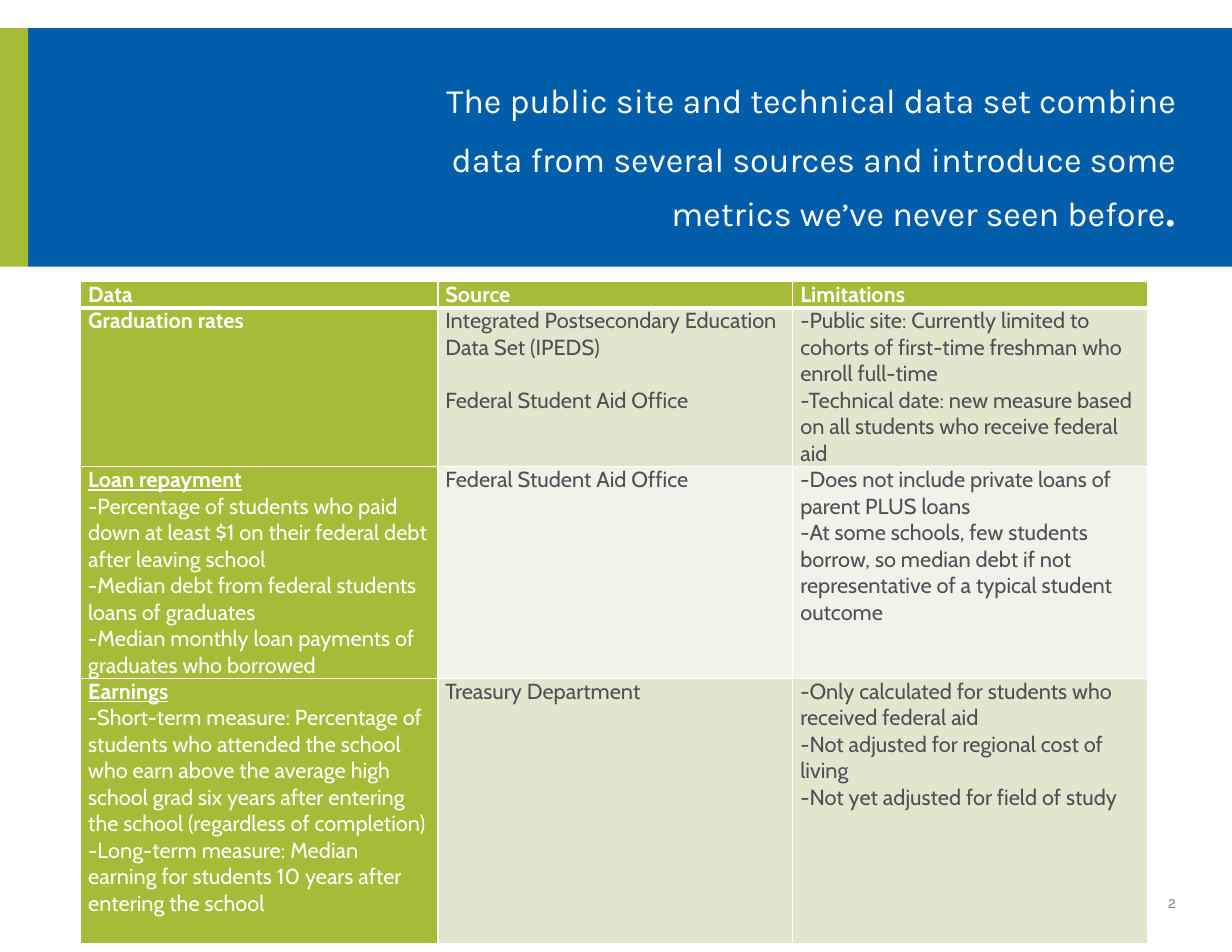
from lxml import etree
from pptx import Presentation
from pptx.dml.color import RGBColor
from pptx.enum.shapes import MSO_SHAPE
from pptx.enum.text import MSO_ANCHOR, PP_ALIGN
from pptx.oxml.ns import qn
from pptx.util import Cm, Pt

RECTANGLE = MSO_SHAPE.RECTANGLE
BOTTOM = MSO_ANCHOR.BOTTOM
RIGHT = PP_ALIGN.RIGHT
BLUE = RGBColor(0x00, 0x5D, 0xAA)
GREEN = RGBColor(0xA7, 0xBB, 0x39)
BAND = RGBColor(0xE1, 0xE7, 0xCE)
PALE = RGBColor(0xF1, 0xF3, 0xE8)
INK = RGBColor(0x4F, 0x50, 0x54)
GREY = RGBColor(0x7B, 0x7C, 0x7F)
WHITE = RGBColor(0xFF, 0xFF, 0xFF)

HEADINGS = ["Data", "Source", "Limitations"]
ROWS = [
    (
        "Graduation rates",
        [],
        ["Integrated Postsecondary Education Data Set (IPEDS)",
         "Federal Student Aid Office"],
        ["-Public site: Currently limited to cohorts of first-time freshman who enroll full-time",
         "-Technical date: new measure based on all students who receive federal aid"],
    ),
    (
        "Loan repayment",
        ["-Percentage of students who paid down at least $1 on their federal debt after leaving school",
         "-Median debt from federal students loans of graduates",
         "-Median monthly loan payments of graduates who borrowed"],
        ["Federal Student Aid Office"],
        ["-Does not include private loans of parent PLUS loans",
         "-At some schools, few students borrow, so median debt if not "
         "representative of a typical student outcome"],
    ),
    (
        "Earnings",
        ["-Short-term measure: Percentage of students who attended the school who earn above "
         "the average high school grad six years after entering the school (regardless of completion)",
         "-Long-term measure: Median earning for students 10 years after entering the school"],
        ["Treasury Department"],
        ["-Only calculated for students who received federal aid",
         "-Not adjusted for regional cost of living",
         "-Not yet adjusted for field of study"],
    ),
]


def add_run(paragraph, text, size=14, font="Cabin", color=WHITE, bold=False, underline=False):
    """Add one formatted run to a paragraph."""
    run = paragraph.add_run()
    run.text = text
    run.font.size = Pt(size)
    run.font.name = font
    run.font.color.rgb = color
    run.font.bold = bold
    run.font.underline = underline


def add_borders(cell, bottom):
    """Give a cell white borders with the stated bottom width in points."""
    properties = cell._tc.get_or_add_tcPr()
    for index, (side, width) in enumerate(zip("LRTB", (1, 1, 1, bottom))):
        line = etree.Element(qn(f"a:ln{side}"), w=str(Pt(width)))
        fill = etree.SubElement(line, qn("a:solidFill"))
        etree.SubElement(fill, qn("a:srgbClr"), val=str(WHITE))
        properties.insert(index, line)


class SlideBuilder:
    """Hold the current slide and draw its elements in one style."""

    def __init__(self, slide):
        """Keep the slide to draw on."""
        self.slide = slide

    def bar(self, left, width, color):
        """Draw one part of the header band."""
        shape = self.slide.shapes.add_shape(RECTANGLE, Cm(left), Cm(0.64), Cm(width), Cm(5.41))
        shape.shadow.inherit = False
        shape.fill.solid()
        shape.fill.fore_color.rgb = color
        shape.line.fill.background()

    def text_box(self, left, top, width, height):
        """Add a right-aligned text box and return its paragraph."""
        box = self.slide.shapes.add_textbox(Cm(left), Cm(top), Cm(width), Cm(height))
        frame = box.text_frame
        frame.word_wrap = True
        frame.vertical_anchor = BOTTOM
        frame.margin_left = frame.margin_right = frame.margin_top = frame.margin_bottom = 0
        paragraph = frame.paragraphs[0]
        paragraph.alignment = RIGHT
        return paragraph

    def cell(self, cell, texts, fill, gap=0, bottom=1, lead=None, **style):
        """Fill a table cell, with an optional format for its first paragraph."""
        cell.margin_left = cell.margin_right = Cm(0.17)
        cell.margin_top = cell.margin_bottom = 0
        cell.fill.solid()
        cell.fill.fore_color.rgb = fill
        add_borders(cell, bottom)
        frame = cell.text_frame
        for index, text in enumerate(texts):
            paragraph = frame.add_paragraph() if index else frame.paragraphs[0]
            if index and gap:
                paragraph.space_before = Pt(gap)
            add_run(paragraph, text, **(style if index or lead is None else lead))

    def table(self, left, top, widths, heights):
        """Add the table of data, sources and limitations."""
        table = self.slide.shapes.add_table(
            len(heights), len(widths), Cm(left), Cm(top), Cm(sum(widths)), Cm(sum(heights))
        ).table
        for column, width in zip(table.columns, widths):
            column.width = Cm(width)
        for row, height in zip(table.rows, heights):
            row.height = Cm(height)
        for column, heading in enumerate(HEADINGS):
            self.cell(table.cell(0, column), [heading], GREEN, bottom=3, bold=True)
        for row, (name, measures, sources, limits) in enumerate(ROWS, 1):
            band = BAND if row % 2 else PALE
            lead = {"bold": True, "underline": bool(measures)}
            self.cell(table.cell(row, 0), [name, *measures], GREEN, lead=lead)
            self.cell(table.cell(row, 1), sources, band, gap=17, color=INK)
            self.cell(table.cell(row, 2), limits, band, color=INK)


def main():
    """Build and save the presentation."""
    presentation = Presentation()
    presentation.slide_width = Cm(27.94)
    presentation.slide_height = Cm(21.59)
    builder = SlideBuilder(presentation.slides.add_slide(presentation.slide_layouts[6]))

    builder.bar(0.64, 27.3, BLUE)
    builder.bar(0, 0.64, GREEN)

    title = builder.text_box(8.89, 1.6, 17.78, 3.81)
    title.line_spacing = Pt(38)
    add_run(title, "The public site and technical data set combine data from several sources "
            "and introduce some metrics we’ve never seen before", size=22, font="Karla")
    add_run(title, ".", size=38, font="Karla")

    builder.table(1.83, 6.38, [8.1, 8.05, 8.05], [0.6, 3.6, 4.8, 6.02])

    number = builder.text_box(20.14, 20.02, 6.53, 0.64)
    add_run(number, "2", size=9, font="Karla", color=GREY)

    presentation.save("out.pptx")


if __name__ == "__main__":
    main()
